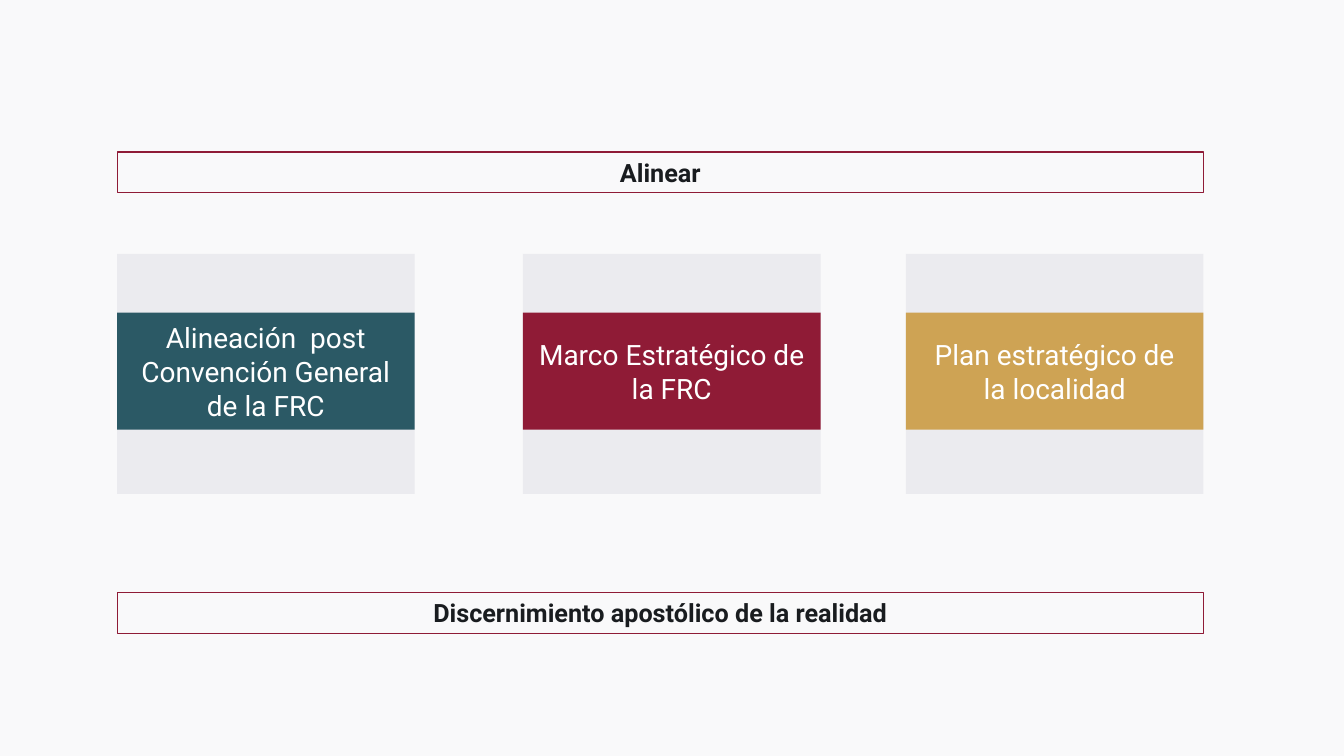
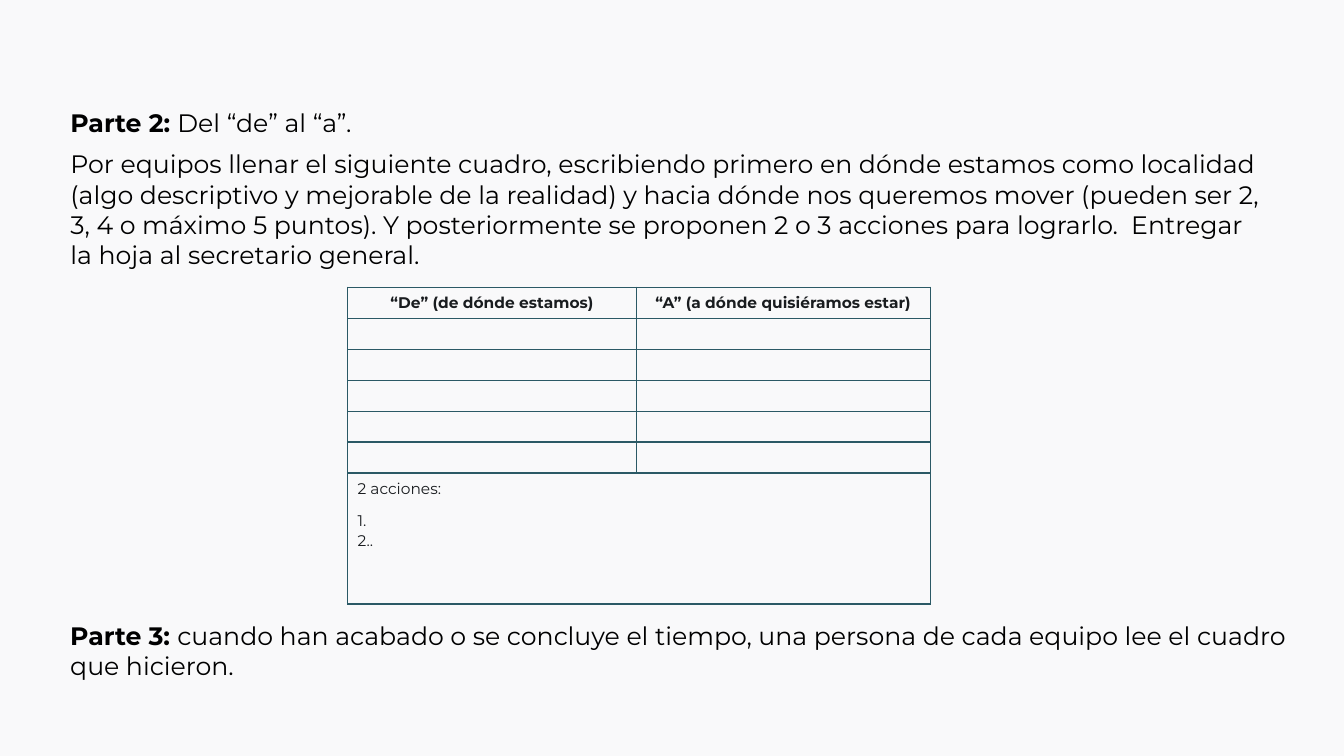
import lxml.etree
import pptx
import pptx.dml.color
import pptx.enum.shapes
import pptx.enum.text
import pptx.oxml
import pptx.oxml.ns
import pptx.util

Cm = pptx.util.Cm
Pt = pptx.util.Pt
ALIGN = pptx.enum.text.PP_ALIGN
ANCHOR = pptx.enum.text.MSO_ANCHOR

COLORS = {
    "background": "F9F9FA",
    "panel": "EBEBEF",
    "teal": "2B5965",
    "wine": "8F1B36",
    "gold": "CEA354",
    "ink": "191C1F",
    "black": "000000",
    "white": "FFFFFF",
}
DIAGRAM_FONT = "Roboto"
EXERCISE_FONT = "Montserrat"


def color(name):
    return pptx.dml.color.RGBColor.from_string(COLORS[name])


def place(shape, box):
    shape.left, shape.top, shape.width, shape.height = (Cm(length) for length in box)


def add_run(paragraph, text, font_name, size, color_name, bold=False):
    run = paragraph.add_run()
    run.text = text
    run.font.name = font_name
    run.font.size = Pt(size)
    run.font.bold = bold
    run.font.color.rgb = color(color_name)


def prepare_frame(shape, anchor):
    frame = shape.text_frame
    frame.word_wrap = True
    frame.auto_size = pptx.enum.text.MSO_AUTO_SIZE.NONE
    frame.vertical_anchor = anchor
    return frame


def add_rectangle(slide, box, fill_name):
    shape = slide.shapes.add_shape(
        pptx.enum.shapes.MSO_SHAPE.RECTANGLE, *(Cm(length) for length in box))
    shape.shadow.inherit = False
    shape.fill.solid()
    shape.fill.fore_color.rgb = color(fill_name)
    shape.line.fill.background()
    return shape


def format_banner(shape, box, text):
    """Outline a shape and centre one bold line of text in it."""
    place(shape, box)
    shape.fill.background()
    shape.line.color.rgb = color("wine")
    shape.line.width = Pt(0.75)
    paragraph = prepare_frame(shape, ANCHOR.MIDDLE).paragraphs[0]
    paragraph.alignment = ALIGN.CENTER
    add_run(paragraph, text, DIAGRAM_FONT, 18, "ink", bold=True)


def add_card(slide, box, fill_name, lines):
    """Draw a pale panel with a coloured label band across it."""
    left, top, width, height = box
    add_rectangle(slide, box, "panel")
    band = add_rectangle(slide, (left, top + 1.48, width, 2.95), fill_name)
    frame = prepare_frame(band, ANCHOR.MIDDLE)
    for index, line in enumerate(lines):
        paragraph = frame.add_paragraph() if index else frame.paragraphs[0]
        paragraph.alignment = ALIGN.CENTER
        add_run(paragraph, line, DIAGRAM_FONT, 20, "white")


def add_alignment_slide(presentation, box):
    left, top, width, height = box
    slide = presentation.slides.add_slide(presentation.slide_layouts[5])
    banner_height = 1.03
    format_banner(slide.shapes.title, (left, top, width, banner_height), "Alinear")
    cards = [
        (0, "teal", ["Alineación  post Convención General de la FRC"]),
        (10.23, "wine", ["Marco Estratégico de la FRC"]),
        (19.88, "gold", ["Plan estratégico de", "la localidad"]),
    ]
    for offset, fill_name, lines in cards:
        add_card(slide, (left + offset, top + 2.57, 7.5, 6.05), fill_name, lines)
    lower_banner = add_rectangle(slide, box, "background")
    format_banner(lower_banner,
                  (left, top + height - banner_height, width, banner_height),
                  "Discernimiento apostólico de la realidad")


def write_instruction(shape, box, lead, text):
    """Write one left-aligned paragraph with an optional bold lead."""
    place(shape, box)
    paragraph = prepare_frame(shape, ANCHOR.TOP).paragraphs[0]
    paragraph.alignment = ALIGN.LEFT
    paragraph.space_before = Pt(0)
    if lead:
        add_run(paragraph, lead, EXERCISE_FONT, 18, "black", bold=True)
    add_run(paragraph, text, EXERCISE_FONT, 18, "black")


def remove_bullet(paragraph):
    properties = paragraph._p.get_or_add_pPr()
    properties.set("marL", "0")
    properties.set("indent", "0")
    lxml.etree.SubElement(properties, pptx.oxml.ns.qn("a:buNone"))


def add_number(paragraph):
    properties = paragraph._p.get_or_add_pPr()
    number = lxml.etree.SubElement(properties, pptx.oxml.ns.qn("a:buAutoNum"))
    number.set("type", "arabicPeriod")


def format_cell(cell):
    cell.fill.background()
    cell.text_frame.paragraphs[0].line_spacing = Pt(14.6)
    properties = cell._tc.get_or_add_tcPr()
    for index, side in enumerate(("lnL", "lnR", "lnT", "lnB")):
        border = pptx.oxml.parse_xml(
            f'<a:{side} {pptx.oxml.ns.nsdecls("a")} w="{Pt(1)}"><a:solidFill>'
            f'<a:srgbClr val="{COLORS["teal"]}"/></a:solidFill></a:{side}>')
        properties.insert(index, border)


def compact_empty_cell(cell):
    """Keep an empty cell from stretching its row."""
    cell.margin_top = cell.margin_bottom = Cm(0)
    paragraph = cell.text_frame.paragraphs[0]
    ending = lxml.etree.SubElement(paragraph._p, pptx.oxml.ns.qn("a:endParaRPr"))
    ending.set("sz", "1100")


def add_worksheet(slide, box):
    """Draw the table to fill in: two columns over one merged row of actions."""
    left, top, width, height = box
    row_count, row_height, first_width = 7, 0.78, 7.28
    table = slide.shapes.add_table(
        row_count, 2, *(Cm(length) for length in box)).table
    table.first_row = False
    table.horz_banding = False
    table.columns[0].width = Cm(first_width)
    table.columns[1].width = Cm(width - first_width)
    for row in table.rows:
        row.height = Cm(row_height)
    table.rows[row_count - 1].height = Cm(height - (row_count - 1) * row_height)
    for cell in table.iter_cells():
        format_cell(cell)
    for row in range(1, row_count - 1):
        for column in range(2):
            compact_empty_cell(table.cell(row, column))

    headings = ("“De” (de dónde estamos)", "“A” (a dónde quisiéramos estar)")
    for column, heading in enumerate(headings):
        paragraph = table.cell(0, column).text_frame.paragraphs[0]
        paragraph.alignment = ALIGN.CENTER
        add_run(paragraph, heading, EXERCISE_FONT, 11, "ink", bold=True)

    actions = table.cell(row_count - 1, 0)
    actions.merge(table.cell(row_count - 1, 1))
    frame = actions.text_frame
    frame.paragraphs[0].space_after = Pt(8)
    add_run(frame.paragraphs[0], "2 acciones:", EXERCISE_FONT, 11, "ink")
    for text in (" ", "."):
        paragraph = frame.add_paragraph()
        paragraph.line_spacing = Pt(14.6)
        add_number(paragraph)
        add_run(paragraph, text, EXERCISE_FONT, 11, "ink")


def add_exercise_slide(presentation, box):
    left, top, width, height = box
    slide = presentation.slides.add_slide(presentation.slide_layouts[1])
    write_instruction(slide.shapes.title, (left, top, width, 1.04),
                      "Parte 2: ", "Del “de” al “a”.")
    body = slide.placeholders[1]
    remove_bullet(body.text_frame.paragraphs[0])
    write_instruction(
        body, (left, top + 1.05, 30.68, 3.34), "",
        "Por equipos llenar el siguiente cuadro, escribiendo primero en dónde "
        "estamos como localidad (algo descriptivo y mejorable de la realidad) y "
        "hacia dónde nos queremos mover (pueden ser 2, 3, 4 o máximo 5 puntos). "
        "Y posteriormente se proponen 2 o 3 acciones para lograrlo.  Entregar la "
        "hoja al secretario general.")
    add_worksheet(slide, (left + 7.24, top + 4.67, 14.68, 7.98))
    closing_height = 1.8
    closing = slide.shapes.add_textbox(0, 0, 0, 0)
    write_instruction(
        closing, (left, top + height - closing_height, width, closing_height),
        "Parte 3: ",
        "cuando han acabado o se concluye el tiempo, una persona de cada equipo "
        "lee el cuadro que hicieron.")


def main():
    presentation = pptx.Presentation()
    presentation.slide_width = Cm(33.87)
    presentation.slide_height = Cm(19.05)
    background = presentation.slide_master.background.fill
    background.solid()
    background.fore_color.rgb = color("background")
    add_alignment_slide(presentation, (2.95, 3.83, 27.38, 12.13))
    add_exercise_slide(presentation, (1.52, 2.57, 31.37, 14.73))
    presentation.save("out.pptx")


if __name__ == "__main__":
    main()
